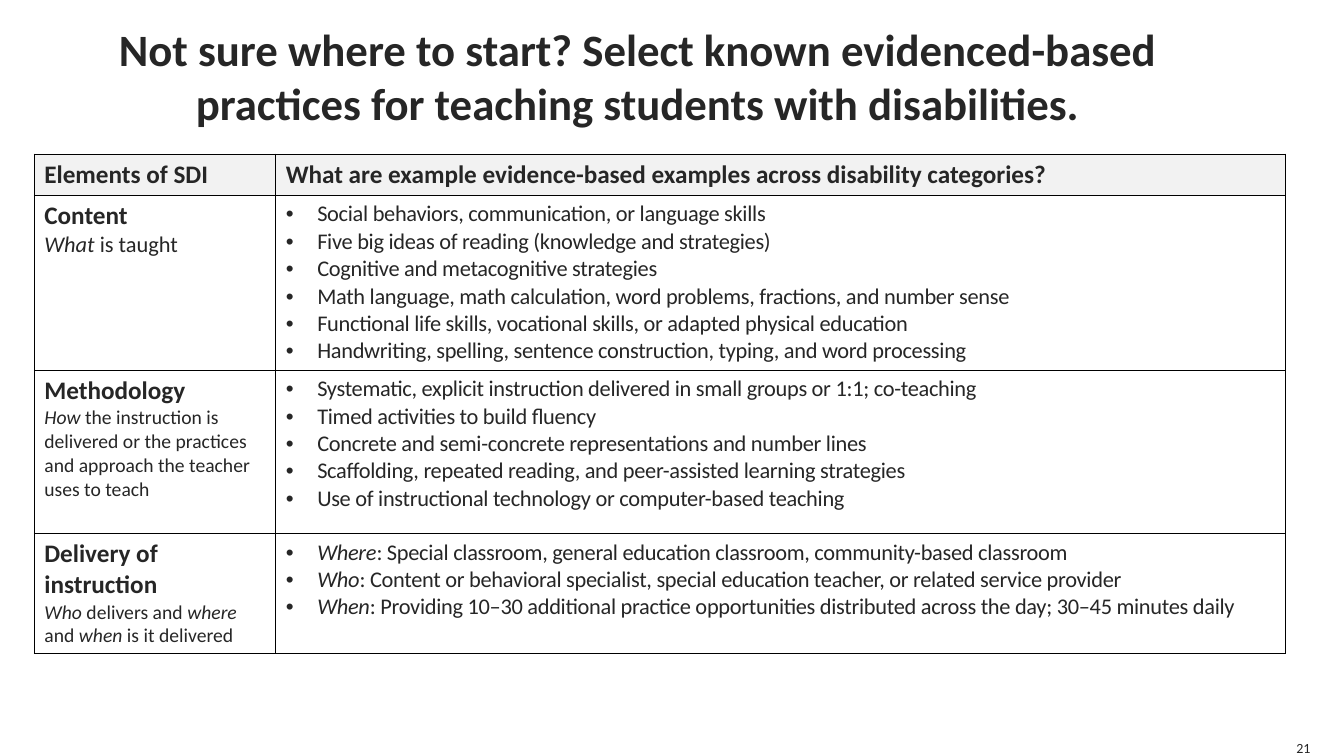
from lxml.etree import SubElement as add_element
from pptx import Presentation
from pptx.dml.color import RGBColor
from pptx.enum.text import MSO_ANCHOR, MSO_AUTO_SIZE, PP_ALIGN
from pptx.oxml.ns import qn
from pptx.util import Pt

COLORS = {"text": "262626", "header": "F2F2F2", "body": "FFFFFF", "border": "000000"}
FONT = "Calibri"
TITLE = ("Not sure where to start? Select known evidenced-based practices "
         "for teaching students with disabilities.")
HEADERS = ["Elements of SDI",
           "What are example evidence-based examples across disability categories?"]
ELEMENTS = [
    ("Content", "*What* is taught", 16, [
        "Social behaviors, communication, or language skills",
        "Five big ideas of reading (knowledge and strategies)",
        "Cognitive and metacognitive strategies",
        "Math language, math calculation, word problems, fractions, and number sense",
        "Functional life skills, vocational skills, or adapted physical education",
        "Handwriting, spelling, sentence construction, typing, and word processing",
    ]),
    ("Methodology",
     "*How* the instruction is delivered or the practices and approach the teacher uses to teach",
     14, [
         "Systematic, explicit instruction delivered in small groups or 1:1; co-teaching",
         "Timed activities to build fluency",
         "Concrete and semi-concrete representations and number lines",
         "Scaffolding, repeated reading, and peer-assisted learning strategies",
         "Use of instructional technology or computer-based teaching",
     ]),
    ("Delivery of instruction", "*Who* delivers and *where* and *when* is it delivered", 14, [
        "*Where*: Special classroom, general education classroom, community-based classroom",
        "*Who*: Content or behavioral specialist, special education teacher, "
        "or related service provider",
        "*When*: Providing 10–30 additional practice opportunities distributed "
        "across the day; 30–45 minutes daily",
    ]),
]
COLUMN_SHARES = [0.193, 0.807]
ROW_SHARES = [0.083, 0.35, 0.327, 0.24]


def write(paragraph, text, size, bold=False, spacing=0):
    """Write text into a paragraph, with the parts between asterisks in italics."""
    for index, part in enumerate(text.split("*")):
        if not part:
            continue
        run = paragraph.add_run()
        run.text = part
        font = run.font
        font.name, font.size, font.bold = FONT, Pt(size), bold
        font.italic = index % 2 == 1
        font.color.rgb = RGBColor.from_string(COLORS["text"])
        if spacing:
            run._r.get_or_add_rPr().set("spc", str(round(spacing * 100)))


def add_bullet(paragraph, indent):
    """Give a paragraph a round bullet with a hanging indent."""
    properties = paragraph._p.get_or_add_pPr()
    properties.set("marL", str(Pt(indent)))
    properties.set("indent", str(-Pt(indent)))
    add_element(properties, qn("a:buFont"), typeface="Arial")
    add_element(properties, qn("a:buChar"), char="•")


def style_cell(cell, fill):
    """Draw thin borders around a cell and fill it."""
    properties = cell._tc.get_or_add_tcPr()
    for side in ("lnL", "lnR", "lnT", "lnB"):
        line = add_element(properties, qn(f"a:{side}"), w=str(Pt(0.75)))
        solid = add_element(line, qn("a:solidFill"))
        add_element(solid, qn("a:srgbClr"), val=COLORS["border"])
    cell.fill.solid()
    cell.fill.fore_color.rgb = RGBColor.from_string(COLORS[fill])


def clear_frame(text_frame, anchor, wrap):
    """Remove the insets of a text frame and set its anchor and wrapping."""
    text_frame.margin_left = text_frame.margin_right = 0
    text_frame.margin_top = text_frame.margin_bottom = 0
    text_frame.auto_size = MSO_AUTO_SIZE.NONE
    text_frame.vertical_anchor = anchor
    text_frame.word_wrap = wrap


def place_title(slide, left, top, width, height):
    """Place the centred title in the given box."""
    title = slide.shapes.title
    title.left, title.top, title.width, title.height = Pt(left), Pt(top), Pt(width), Pt(height)
    clear_frame(title.text_frame, MSO_ANCHOR.MIDDLE, True)
    paragraph = title.text_frame.paragraphs[0]
    paragraph.alignment = PP_ALIGN.CENTER
    write(paragraph, TITLE, 32, bold=True)


def place_table(slide, left, top, width, height):
    """Place the table of instruction elements in the given box."""
    table = slide.shapes.add_table(len(ROW_SHARES), len(COLUMN_SHARES), Pt(left), Pt(top),
                                   Pt(width), Pt(height)).table
    table.horz_banding = False
    for column, share in zip(table.columns, COLUMN_SHARES):
        column.width = Pt(width * share)
    for row, share in zip(table.rows, ROW_SHARES):
        row.height = Pt(height * share)
    for index, header in enumerate(HEADERS):
        cell = table.cell(0, index)
        style_cell(cell, "header")
        write(cell.text_frame.paragraphs[0], header, 18, bold=True)
    for index, (name, summary, size, examples) in enumerate(ELEMENTS, 1):
        element, practices = table.cell(index, 0), table.cell(index, 1)
        style_cell(element, "body")
        style_cell(practices, "body")
        write(element.text_frame.paragraphs[0], name, 18, bold=True)
        write(element.text_frame.add_paragraph(), summary, size)
        frame = practices.text_frame
        for position, example in enumerate(examples):
            paragraph = frame.add_paragraph() if position else frame.paragraphs[0]
            add_bullet(paragraph, 22.5)
            write(paragraph, example, 16, spacing=-0.2)


def place_page_number(slide, left, top, width, height):
    """Place the page number at the bottom right of the given box."""
    box = slide.shapes.add_textbox(Pt(left), Pt(top), Pt(width), Pt(height))
    clear_frame(box.text_frame, MSO_ANCHOR.BOTTOM, False)
    paragraph = box.text_frame.paragraphs[0]
    paragraph.alignment = PP_ALIGN.RIGHT
    write(paragraph, "21", 10)


def main():
    """Build the slide and save it."""
    presentation = Presentation()
    presentation.slide_width, presentation.slide_height = Pt(960), Pt(540)
    slide = presentation.slides.add_slide(presentation.slide_layouts[5])
    place_title(slide, 36, 9.5, 839.5, 89)
    place_table(slide, 24.5, 110, 893.5, 357)
    place_page_number(slide, 924, 528, 12, 12)
    presentation.save("out.pptx")


if __name__ == "__main__":
    main()
